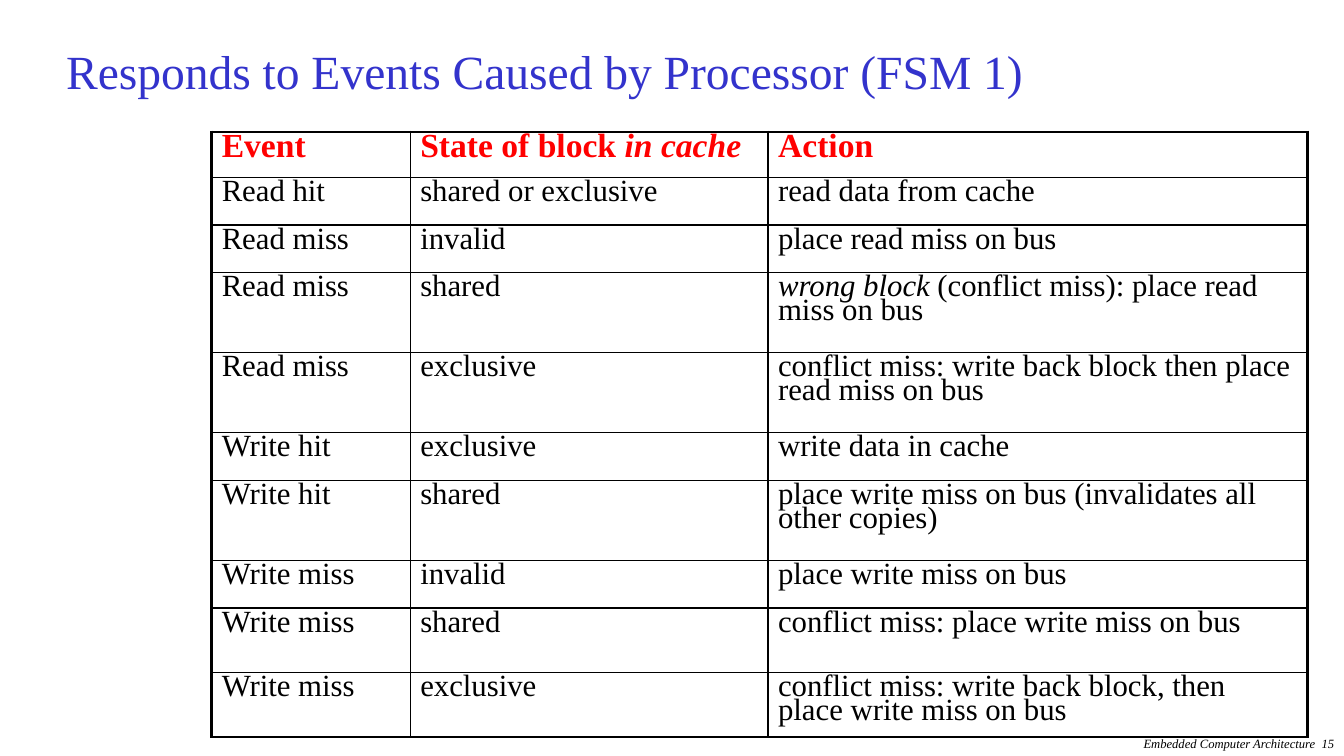
from lxml.etree import SubElement
from pptx import Presentation
from pptx.dml.color import RGBColor
from pptx.enum.text import MSO_ANCHOR, MSO_AUTO_SIZE, PP_ALIGN
from pptx.oxml.ns import qn
from pptx.util import Pt

BLACK, RED, BLUE = "000000", "FF0000", "3333CC"
THIN, THICK = 1, 2.25

COLUMN_WIDTHS = [141.8, 255.6, 385.2]
HEADER = ["Event", [("State of block ", False), ("in cache", True)], "Action"]
CONFLICT = [("wrong block", True), (" (conflict miss): place read miss on bus", False)]
ROWS = [
    (32.4, HEADER),
    (34.1, ["Read hit", "shared or exclusive", "read data from cache"]),
    (34.1, ["Read miss", "invalid", "place read miss on bus"]),
    (57.1, ["Read miss", "shared", CONFLICT]),
    (57.1, ["Read miss", "exclusive",
            "conflict miss: write back block then place read miss on bus"]),
    (34.1, ["Write hit", "exclusive", "write data in cache"]),
    (57.1, ["Write hit", "shared",
            "place write miss on bus (invalidates all other copies)"]),
    (34.1, ["Write miss", "invalid", "place write miss on bus"]),
    (46.1, ["Write miss", "shared", "conflict miss: place write miss on bus"]),
    (46.1, ["Write miss", "exclusive",
            "conflict miss: write back block, then place write miss on bus"]),
]


def color(value):
    return RGBColor.from_string(value)


class Deck:
    font = "Times New Roman"

    def __init__(self, prs):
        self.s = prs.slides.add_slide(prs.slide_layouts[5])

    def add_text(self, p, text, size, rgb, bold=False, italic=False, spacing=1.0):
        runs = [(text, italic)] if isinstance(text, str) else text
        f = p.font
        f.name, f.size, f.bold = self.font, Pt(size), bold
        f.color.rgb = color(rgb)
        p.line_spacing = spacing
        for words, slanted in runs:
            r = p.add_run()
            r.text = words
            r.font.italic = slanted

    def title(self, text, x, y, w, h):
        sp = self.s.shapes.title
        sp.left, sp.top, sp.width, sp.height = Pt(x), Pt(y), Pt(w), Pt(h)
        tf = sp.text_frame
        tf.auto_size = MSO_AUTO_SIZE.NONE
        tf.vertical_anchor = MSO_ANCHOR.MIDDLE
        p = tf.paragraphs[0]
        p.alignment = PP_ALIGN.LEFT
        self.add_text(p, text, 34, BLUE, spacing=0.8)

    def footer(self, text, x, y, w, h):
        sp = self.s.shapes.add_textbox(Pt(x), Pt(y), Pt(w), Pt(h))
        tf = sp.text_frame
        tf.word_wrap = True
        p = tf.paragraphs[0]
        p.alignment = PP_ALIGN.RIGHT
        self.add_text(p, text, 9, BLACK, italic=True)

    def border(self, cell, side, width):
        tcPr = cell._tc.get_or_add_tcPr()
        ln = SubElement(tcPr, qn(f"a:ln{side}"), w=str(Pt(width)))
        fill = SubElement(ln, qn("a:solidFill"))
        SubElement(fill, qn("a:srgbClr"), val=BLACK)

    def table(self, x, y, widths, rows):
        last_row, last_col = len(rows) - 1, len(widths) - 1
        height = sum(h for h, _ in rows)
        frame = self.s.shapes.add_table(
            len(rows), len(widths), Pt(x), Pt(y), Pt(sum(widths)), Pt(height))
        table = frame.table
        table.first_row = table.horz_banding = False
        for column, width in zip(table.columns, widths):
            column.width = Pt(width)
        for i, (row_height, texts) in enumerate(rows):
            table.rows[i].height = Pt(row_height)
            size, rgb = (24, RED) if i == 0 else (22, BLACK)
            for j, text in enumerate(texts):
                cell = table.cell(i, j)
                outer = {"L": j == 0, "R": j == last_col,
                         "T": i == 0, "B": i == last_row}
                for side, is_outer in outer.items():
                    self.border(cell, side, THICK if is_outer else THIN)
                cell.fill.background()
                self.add_text(cell.text_frame.paragraphs[0], text, size, rgb,
                              bold=i == 0, spacing=0.7)


def main():
    prs = Presentation()
    prs.slide_width, prs.slide_height = Pt(960), Pt(540)
    deck = Deck(prs)
    deck.footer("Embedded Computer Architecture  15", 684, 522, 276, 18)
    deck.title("Responds to Events Caused by Processor (FSM 1)", 40, 21, 872, 66)
    deck.table(151.2, 94.3, COLUMN_WIDTHS, ROWS)
    prs.save("out.pptx")


if __name__ == "__main__":
    main()
